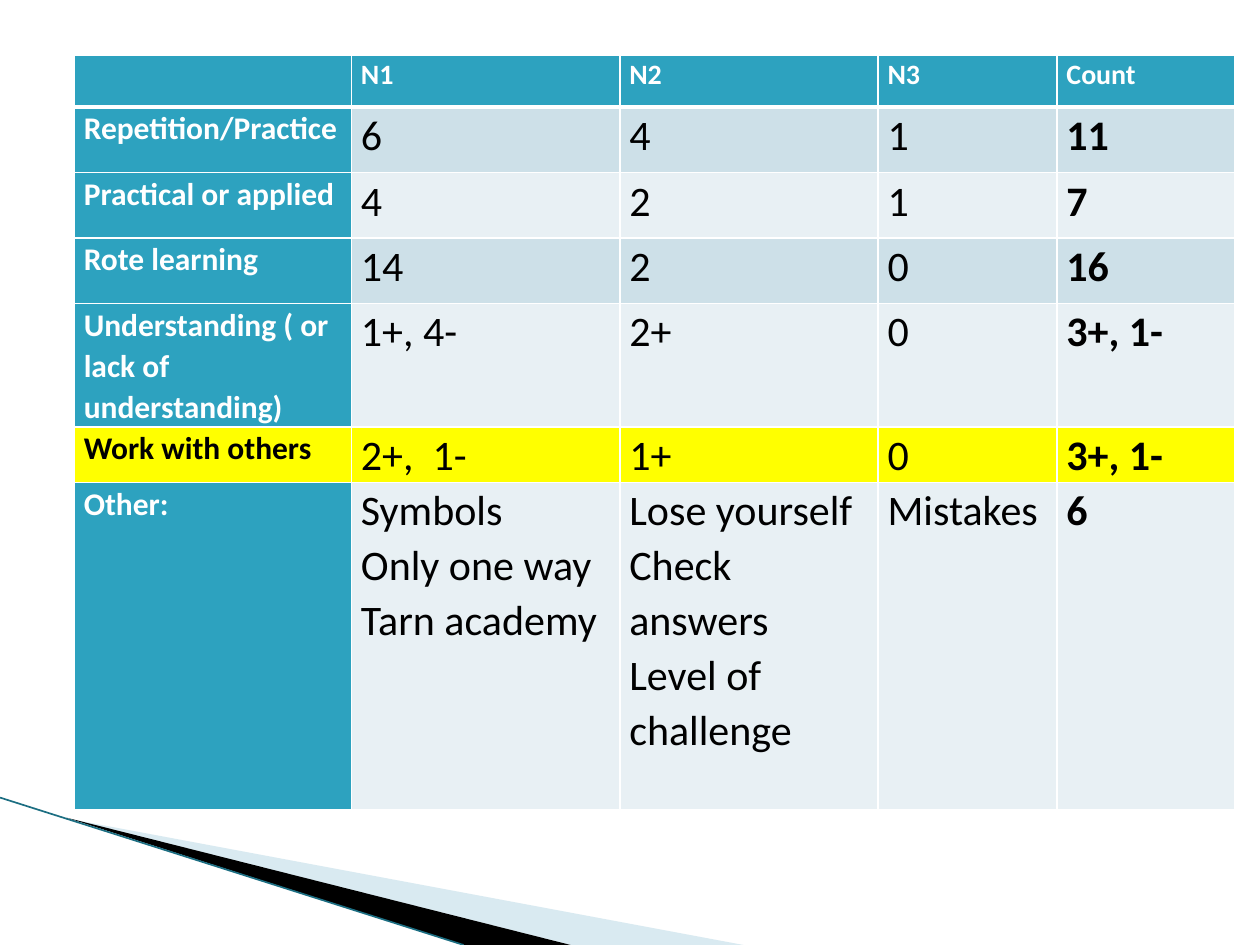
import pptx
import pptx.util
import pptx.dml.color
import pptx.enum.shapes
from lxml import etree
from pptx.oxml.ns import qn

Inches, Pt, RGBColor = pptx.util.Inches, pptx.util.Pt, pptx.dml.color.RGBColor
TEAL = RGBColor(0x2D, 0xA2, 0xBF)
DARK_TEAL = RGBColor(0x1C, 0x6E, 0x82)
PALE_BLUE = RGBColor(0xA0, 0xCB, 0xDC)
BAND_DARK = RGBColor(0xCD, 0xE0, 0xE8)
BAND_LIGHT = RGBColor(0xE8, 0xF0, 0xF4)
YELLOW = RGBColor(0xFF, 0xFF, 0x00)
WHITE = RGBColor(0xFF, 0xFF, 0xFF)
BLACK = RGBColor(0, 0, 0)


def add_wedge(corners, color):
    points = [(Inches(x), Inches(y)) for x, y in corners]
    builder = slide.shapes.build_freeform(*points[0])
    builder.add_line_segments(points[1:], close=True)
    wedge = builder.convert_to_shape()
    wedge.shadow.inherit = False
    wedge.fill.solid()
    wedge.fill.fore_color.rgb = color
    wedge.line.fill.background()
    return wedge


def set_border(cell, side, points):
    border = etree.SubElement(cell._tc.get_or_add_tcPr(), qn(f"a:{side}"), w=str(Pt(points)))
    fill = etree.SubElement(border, qn("a:solidFill"))
    etree.SubElement(fill, qn("a:srgbClr"), val=str(WHITE))


prs = pptx.Presentation()
prs.slide_width, prs.slide_height = Inches(10), Inches(7.5)
slide = prs.slides.add_slide(prs.slide_layouts[6])

# Corner decoration
pale_wedge = add_wedge([(0.55, 6.5), (5.9, 7.5), (4.53, 7.5)], PALE_BLUE)
pale_color = pale_wedge.fill._xPr.find(".//" + qn("a:srgbClr"))
etree.SubElement(pale_color, qn("a:alpha"), val="40000")
add_wedge([(0.53, 6.49), (4.53, 7.5), (3.68, 7.5)], BLACK)
edge = slide.shapes.add_connector(
    pptx.enum.shapes.MSO_CONNECTOR.STRAIGHT, 0, Inches(6.33), Inches(3.68), Inches(7.5))
edge.line.color.rgb = DARK_TEAL
edge.line.width = Pt(0.95)
etree.SubElement(edge._element.spPr, qn("a:effectLst"))

# Survey table: one tuple per row, a line break starts a new paragraph
answers = [
    ("", "N1", "N2", "N3", "Count"),
    ("Repetition/Practice", "6", "4", "1", "11"),
    ("Practical or applied", "4", "2", "1", "7"),
    ("Rote learning", "14", "2", "0", "16"),
    ("Understanding ( or lack of understanding)", "1+, 4-", "2+", "0", "3+, 1-"),
    ("Work with others", "2+,  1-", "1+", "0", "3+, 1-"),
    ("Other:", "Symbols\nOnly one way\nTarn academy",
     "Lose yourself\nCheck answers\nLevel of challenge", "Mistakes", "6"),
]
column_widths = [2.2, 2.13, 2.05, 1.42, 1.41]
row_heights = [0.41, 0.52, 0.52, 0.52, 0.98, 0.44, 2.6]
highlighted_row = 5
count_column = len(column_widths) - 1

survey = slide.shapes.add_table(
    len(answers), len(column_widths), Inches(0.59), Inches(0.44),
    Inches(sum(column_widths)), Inches(sum(row_heights))).table
for column, width in zip(survey.columns, column_widths):
    column.width = Inches(width)
for row, height in zip(survey.rows, row_heights):
    row.height = Inches(height)

for r, row_answers in enumerate(answers):
    for c, answer in enumerate(row_answers):
        cell = survey.cell(r, c)
        is_heading = r == 0 or c == 0
        cell.margin_left = cell.margin_right = Pt(5.4)
        cell.margin_top = cell.margin_bottom = 0

        # Borders come before the fill in the cell's properties
        for side in ("lnL", "lnR", "lnT", "lnB"):
            heavy = (r == 0 and side == "lnB") or (r == 1 and side == "lnT")
            set_border(cell, side, 3 if heavy else 1)
        cell.fill.solid()
        if r == highlighted_row:
            cell.fill.fore_color.rgb = YELLOW
        elif is_heading:
            cell.fill.fore_color.rgb = TEAL
        else:
            cell.fill.fore_color.rgb = BAND_DARK if r in (1, 3) else BAND_LIGHT

        cell.text_frame.text = answer
        for paragraph in cell.text_frame.paragraphs:
            paragraph.line_spacing = 1.07
            paragraph.font.size = Pt(16 if r == 0 else 18 if c == 0 else 24)
            for run in paragraph.runs:
                run.font.name = "Calibri"
                run.font.size = paragraph.font.size
                run.font.bold = is_heading or c == count_column
                run.font.color.rgb = WHITE if is_heading and r != highlighted_row else BLACK

prs.save("out.pptx")
